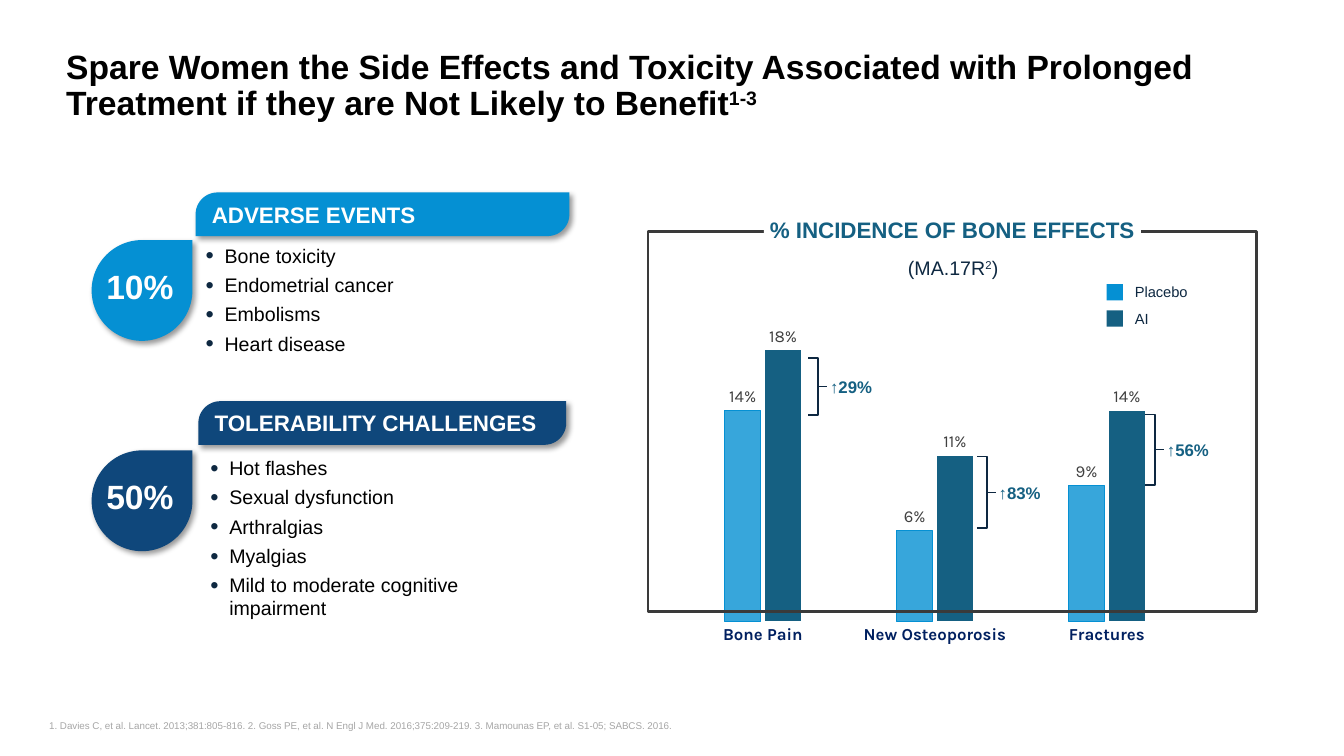
from lxml.etree import SubElement
from pptx import Presentation
from pptx.chart.data import CategoryChartData
from pptx.dml.color import RGBColor
from pptx.enum.chart import XL_CHART_TYPE, XL_LABEL_POSITION, XL_TICK_MARK
from pptx.enum.shapes import MSO_CONNECTOR, MSO_SHAPE
from pptx.enum.text import MSO_ANCHOR, PP_ALIGN
from pptx.oxml.ns import qn
from pptx.util import Cm, Pt

HUES = {
    "black": "000000", "white": "FFFFFF", "sky": "0590D3", "navy": "0F477B",
    "teal": "156082", "ink": "0E2841", "frame": "3A3A3A", "note": "A6A6A6",
    "label": "404040", "axis": "002060",
}
INSET = (0.25, 0.13, 0.25, 0.13)


def node(parent, tag, **attrs):
    return SubElement(parent, qn(tag), attrs)


def hue(name):
    return RGBColor.from_string(HUES[name])


class Deck:
    """Holds the style and the current slide; all lengths are in cm."""

    def __init__(self, wide, high):
        self.face, self.data_face = "Arial", "Karla"
        self.show = Presentation()
        self.show.slide_width, self.show.slide_height = Cm(wide), Cm(high)
        self.slide = self.show.slides.add_slide(self.show.slide_layouts[6])
        self.shapes = self.slide.shapes

    def style(self, font, size, color, bold=False, face=None):
        font.name, font.size, font.bold = face or self.face, Pt(size), bold
        font.color.rgb = hue(color)

    def label(self, shape, paras, size, color, bold=False, align=PP_ALIGN.LEFT,
              anchor=MSO_ANCHOR.TOP, inset=INSET, wrap=True, lead=1.0, bullet=False):
        """Each paragraph is a list of runs; every second run is superscript."""
        frame = shape.text_frame
        frame.word_wrap, frame.vertical_anchor = wrap, anchor
        (frame.margin_left, frame.margin_top,
         frame.margin_right, frame.margin_bottom) = map(Cm, inset)
        for i, runs in enumerate(paras):
            para = frame.add_paragraph() if i else frame.paragraphs[0]
            para.alignment, para.line_spacing = align, lead
            if bullet:
                self.bullet(para)
            self.style(para.font, size, color, bold)
            for j, text in enumerate(runs):
                run = para.add_run()
                run.text = text
                if j % 2:
                    run.font._element.set("baseline", "30000")

    def bullet(self, para):
        para.space_after = Pt(5)
        props = para._p.get_or_add_pPr()
        props.set("marL", str(Cm(0.48)))
        props.set("indent", str(-Cm(0.48)))
        node(node(props, "a:buClr"), "a:srgbClr", val=HUES["ink"])
        node(props, "a:buSzPct", val="120000")
        node(props, "a:buFont", typeface=self.face)
        node(props, "a:buChar", char="•")

    def text(self, box, paras, size, color, **kw):
        self.label(self.shapes.add_textbox(*map(Cm, box)), paras, size, color, **kw)

    def shape(self, kind, box, fill=None, line=None, width=1, shade=False):
        item = self.shapes.add_shape(kind, *map(Cm, box))
        item.shadow.inherit = False
        if fill:
            item.fill.solid()
            item.fill.fore_color.rgb = hue(fill)
        else:
            item.fill.background()
        self.stroke(item, line, width)
        if shade:
            drop = node(item._element.spPr.find(qn("a:effectLst")), "a:outerShdw",
                        blurRad=str(Pt(4)), dist=str(Pt(3)), dir="2700000",
                        algn="tl", rotWithShape="0")
            node(node(drop, "a:srgbClr", val=HUES["black"]), "a:alpha", val="40000")
        return item

    def stroke(self, item, color, width):
        if color:
            item.line.color.rgb, item.line.width = hue(color), Pt(width)
        else:
            item.line.fill.background()

    def panel(self, bar, drop, body, color, head, rate, points):
        tag = self.shape(MSO_SHAPE.ROUND_2_DIAG_RECTANGLE, bar, color, shade=True)
        tag.adjustments[0], tag.adjustments[1] = 0.5, 0
        self.label(tag, [[head]], 16, "white", bold=True, anchor=MSO_ANCHOR.MIDDLE,
                   inset=(0.25, 0, 0.25, 0))
        tear = self.shape(MSO_SHAPE.TEAR, drop, color, shade=True)
        self.label(tear, [[rate]], 24, "white", bold=True, anchor=MSO_ANCHOR.MIDDLE,
                   inset=(0, 0.13, 0, 0.25), wrap=False, lead=0.95)
        self.text(body, [[p] for p in points], 14, "black", lead=0.95, bullet=True)

    def bracket(self, x, top, low, label):
        mid = (top + low) / 2
        pen = self.shapes.build_freeform(Cm(x - 0.25), Cm(low))
        pen.add_line_segments([(Cm(a), Cm(b)) for a, b in
                               ((x, low), (x, top), (x - 0.25, top))], close=False)
        arm = pen.convert_to_shape()
        arm.shadow.inherit = False
        arm.fill.background()
        self.stroke(arm, "ink", 1)
        tick = self.shapes.add_connector(MSO_CONNECTOR.STRAIGHT, Cm(x), Cm(mid),
                                         Cm(x + 0.23), Cm(mid))
        node(tick._element.spPr, "a:effectLst")
        self.stroke(tick, "ink", 1)
        self.text((x + 0.05, mid - 0.38, 1.57, 0.76), [[label]], 12, "teal",
                  bold=True, anchor=MSO_ANCHOR.MIDDLE, wrap=False)

    def chart(self, box, cats, rows):
        data = CategoryChartData(number_format="0%")
        data.categories = cats
        for name, vals, *_ in rows:
            data.add_series(name, vals)
        chart = self.shapes.add_chart(XL_CHART_TYPE.COLUMN_CLUSTERED,
                                      *map(Cm, box), data).chart
        chart.has_legend = chart.has_title = False
        self.style(chart.font, 12, "black", face=self.data_face)
        base, scale = chart.category_axis, chart.value_axis
        base.major_tick_mark = XL_TICK_MARK.NONE
        base.format.line.fill.background()
        self.style(base.tick_labels.font, 12, "axis", True, self.data_face)
        scale.minimum_scale, scale.maximum_scale, scale.major_unit = 0, 0.2, 0.02
        scale.has_major_gridlines = scale.visible = False
        plot = chart.plots[0]
        plot.gap_width, plot.overlap, plot.vary_by_categories = 265, -12, False
        for bars, (_, _, color, alpha) in zip(plot.series, rows):
            fill = bars.format.fill
            fill.solid()
            fill.fore_color.rgb = hue(color)
            if alpha < 100:
                tint = bars._element.spPr.find(".//" + qn("a:srgbClr"))
                node(tint, "a:alpha", val=str(alpha * 1000))
                self.stroke(bars.format, color, 0.75)
            tags = bars.data_labels
            tags.show_value, tags.number_format = True, "0%"
            tags.number_format_is_linked = False
            tags.position = XL_LABEL_POSITION.OUTSIDE_END
            self.style(tags.font, 12, "label", face=self.data_face)


def main():
    deck = Deck(33.87, 19.05)

    # Title and references
    deck.text((1.42, 1.12, 30.18, 2.11),
              [["Spare Women the Side Effects and Toxicity Associated with Prolonged "
                "Treatment if they are Not Likely to Benefit", "1-3"]],
              24, "black", bold=True, anchor=MSO_ANCHOR.BOTTOM, lead=0.9)
    deck.text((0.99, 18.01, 24.87, 0.56),
              [["1. Davies C, et al. Lancet. 2013;381:805-816. 2. Goss PE, et al. "
                "N Engl J Med. 2016;375:209-219. 3. Mamounas EP, et al. S1-05; SABCS. 2016."]],
              7, "note", anchor=MSO_ANCHOR.BOTTOM)

    # Left panels
    deck.panel((4.93, 4.85, 9.42, 1.1), (2.31, 6.05, 2.54, 2.54), (4.93, 6.05, 6.35, 3.07),
               "sky", "ADVERSE EVENTS", "10%",
               ["Bone toxicity", "Endometrial cancer", "Embolisms", "Heart disease"])
    deck.panel((5, 10.11, 9.27, 1.1), (2.31, 11.35, 2.54, 2.54), (5.05, 11.4, 8.18, 4.37),
               "navy", "TOLERABILITY CHALLENGES", "50%",
               ["Hot flashes", "Sexual dysfunction", "Arthralgias", "Myalgias",
                "Mild to moderate cognitive impairment"])

    # Chart with its frame and heading
    deck.text((18.62, 6.4, 10.8, 0.76), [["(MA.17R", "2", ")"]], 14, "ink",
              align=PP_ALIGN.CENTER, lead=0.85)
    deck.chart((16.79, 7.9, 13.54, 8.53), ["Bone Pain", "New Osteoporosis", "Fractures"],
               [("Placebo", (0.14, 0.06, 0.09), "sky", 80),
                ("AI", (0.18, 0.11, 0.14), "teal", 100)])
    deck.shape(MSO_SHAPE.RECTANGLE, (16.33, 5.84, 15.34, 9.58), line="frame", width=2)
    head = deck.shape(MSO_SHAPE.RECTANGLE, (19.25, 5.16, 9.5, 1.3), "white")
    deck.label(head, [["% INCIDENCE OF BONE EFFECTS"]], 16, "teal", bold=True,
               align=PP_ALIGN.CENTER, anchor=MSO_ANCHOR.MIDDLE,
               inset=(0, 0.13, 0, 0.13), lead=0.95)

    # Increase brackets
    for mark in ((29.11, 10.44, 12.22, "↑56%"), (24.87, 11.51, 13.31, "↑83%"),
                 (20.62, 9.02, 10.46, "↑29%")):
        deck.bracket(*mark)

    # Legend
    for i, (name, color) in enumerate((("Placebo", "sky"), ("AI", "teal"))):
        y = 7.01 + 0.66 * i
        deck.shape(MSO_SHAPE.RECTANGLE, (27.89, y + 0.15, 0.41, 0.41), color)
        deck.text((28.35, y, 1.9, 0.71), [[name]], 10.5, "ink")

    deck.show.save("out.pptx")


if __name__ == "__main__":
    main()
